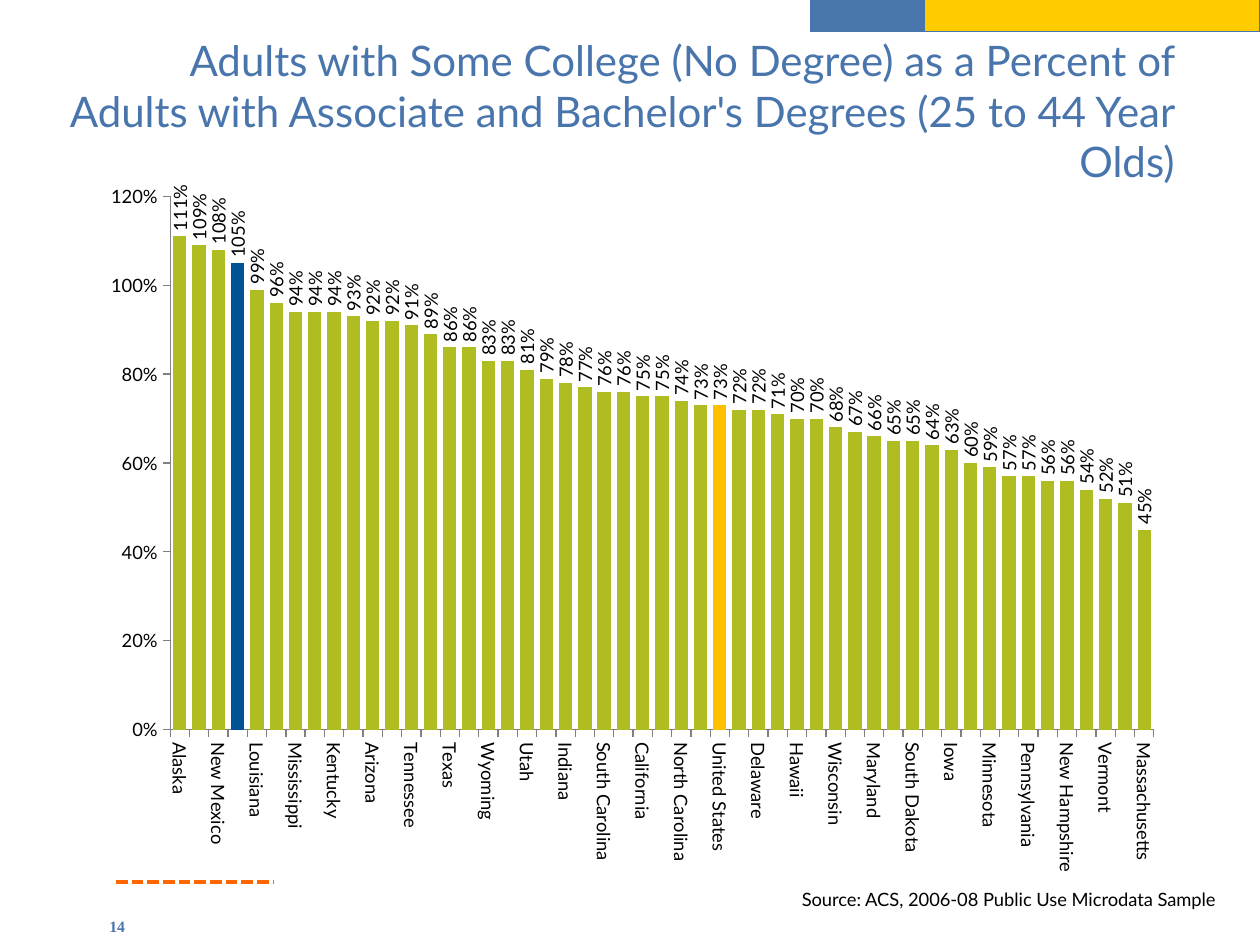
from lxml import etree
from pptx import Presentation
from pptx.chart.data import CategoryChartData
from pptx.dml.color import RGBColor
from pptx.enum.chart import XL_CHART_TYPE as ChartType, XL_LABEL_POSITION as LabelPosition, XL_TICK_MARK as TickMark
from pptx.enum.dml import MSO_LINE as LineStyle
from pptx.enum.shapes import MSO_CONNECTOR as Connector, MSO_SHAPE as Shape
from pptx.enum.text import MSO_ANCHOR as Anchor, PP_ALIGN as Align
from pptx.oxml.ns import qn
from pptx.util import Inches, Pt

BLUE = RGBColor(0x49, 0x75, 0xAD)
YELLOW = RGBColor(0xFF, 0xCC, 0x00)
ORANGE = RGBColor(0xFF, 0x66, 0x00)
GREEN = RGBColor(0xAF, 0xBD, 0x22)
NAVY = RGBColor(0x00, 0x52, 0x95)
GOLD = RGBColor(0xFF, 0xC0, 0x00)
GRAY = RGBColor(0x80, 0x80, 0x80)
BLACK = RGBColor(0, 0, 0)

HIGHLIGHTS = {"Arkansas": NAVY, "United States": GOLD}
STATE_PERCENTS = [
    ("Alaska", 111), ("Nevada", 109), ("New Mexico", 108), ("Arkansas", 105),
    ("Louisiana", 99), ("Oklahoma", 96), ("Mississippi", 94), ("West Virginia", 94),
    ("Kentucky", 94), ("Alabama", 93), ("Arizona", 92), ("Idaho", 92),
    ("Tennessee", 91), ("Michigan", 89), ("Texas", 86), ("Oregon", 86),
    ("Wyoming", 83), ("Missouri", 83), ("Utah", 81), ("Montana", 79),
    ("Indiana", 78), ("Ohio", 77), ("South Carolina", 76), ("Georgia", 76),
    ("California", 75), ("Maine", 75), ("North Carolina", 74), ("Kansas", 73),
    ("United States", 73), ("Washington", 72), ("Delaware", 72), ("Nebraska", 71),
    ("Hawaii", 70), ("Florida", 70), ("Wisconsin", 68), ("Virginia", 67),
    ("Maryland", 66), ("Illinois", 65), ("South Dakota", 65), ("Colorado", 64),
    ("Iowa", 63), ("Rhode Island", 60), ("Minnesota", 59), ("Connecticut", 57),
    ("Pennsylvania", 57), ("North Dakota", 56), ("New Hampshire", 56),
    ("New Jersey", 54), ("Vermont", 52), ("New York", 51), ("Massachusetts", 45),
]


def add_text(slide, box, text, size=10.5, font="Lato", color=BLACK, bold=False,
             align=Align.LEFT, anchor=Anchor.TOP):
    frame = slide.shapes.add_textbox(*map(Inches, box)).text_frame
    frame.word_wrap = True
    frame.vertical_anchor = anchor
    paragraph = frame.paragraphs[0]
    paragraph.alignment = align
    run = paragraph.add_run()
    run.text = text
    run.font.size = Pt(size)
    run.font.name = font
    run.font.bold = bold
    run.font.color.rgb = color


def add_top_band(slide, box):
    left, top, width, height = box
    blue_width = 0.91
    parts = [(left, blue_width, BLUE), (left + blue_width, width - blue_width, YELLOW)]
    for part_left, part_width, color in parts:
        shape = slide.shapes.add_shape(
            Shape.RECTANGLE, *map(Inches, (part_left, top, part_width, height)))
        shape.shadow.inherit = False
        shape.fill.solid()
        shape.fill.fore_color.rgb = color
        shape.line.color.rgb = BLUE
        shape.line.width = Pt(0.75)


def add_dotted_rule(slide, left, top, width):
    rule = slide.shapes.add_connector(
        Connector.STRAIGHT, *map(Inches, (left, top, left + width, top)))
    rule.line.color.rgb = ORANGE
    rule.line.width = Pt(2.25)
    rule.line.dash_style = LineStyle.SQUARE_DOT
    etree.SubElement(rule.element.spPr, qn("a:effectLst"))


def rotate_text(chart, parent, degrees):
    body = chart.element.xpath(f".//{parent}/c:txPr/a:bodyPr")[0]
    body.set("rot", str(degrees * 60000))
    body.set("vert", "horz")


def set_plot_layout(chart, x, y, w, h):
    plot_area = chart.element.xpath(".//c:plotArea")[0]
    for old_layout in plot_area.findall(qn("c:layout")):
        plot_area.remove(old_layout)
    layout = etree.Element(qn("c:layout"))
    manual = etree.SubElement(layout, qn("c:manualLayout"))
    settings = {"layoutTarget": "inner", "xMode": "edge", "yMode": "edge",
                "x": x, "y": y, "w": w, "h": h}
    for name, value in settings.items():
        etree.SubElement(manual, qn(f"c:{name}")).set("val", str(value))
    plot_area.insert(0, layout)


def style_axes(chart):
    for axis in (chart.category_axis, chart.value_axis):
        axis.has_major_gridlines = False
        axis.major_tick_mark = TickMark.OUTSIDE
        axis.minor_tick_mark = TickMark.NONE
        axis.format.line.color.rgb = GRAY
        axis.format.line.width = Pt(0.75)
        axis.tick_labels.font.size = Pt(10.5)
    value_axis = chart.value_axis
    value_axis.minimum_scale, value_axis.maximum_scale = 0, 1.2
    value_axis.major_unit = 0.2
    value_axis.tick_labels.number_format = "0%"
    value_axis.tick_labels.number_format_is_linked = False
    rotate_text(chart, "c:catAx", 90)
    skip = etree.Element(qn("c:tickLblSkip"))
    skip.set("val", "2")
    chart.element.xpath(".//c:catAx/c:noMultiLvlLbl")[0].addprevious(skip)


def add_state_chart(slide, box):
    data = CategoryChartData(number_format="0%")
    data.categories = [state for state, _ in STATE_PERCENTS]
    data.add_series("Series 1", [percent / 100 for _, percent in STATE_PERCENTS])
    chart = slide.shapes.add_chart(
        ChartType.COLUMN_CLUSTERED, *map(Inches, box), data).chart
    chart.has_legend = False
    chart.has_title = False
    chart.font.name = "Lato"
    chart.font.size = Pt(10.5)
    chart.font.color.rgb = BLACK
    plot = chart.plots[0]
    plot.vary_by_categories = False
    plot.gap_width = 45
    series = plot.series[0]
    series.format.fill.solid()
    series.format.fill.fore_color.rgb = GREEN
    for index, (state, _) in enumerate(STATE_PERCENTS):
        if state in HIGHLIGHTS:
            fill = series.points[index].format.fill
            fill.solid()
            fill.fore_color.rgb = HIGHLIGHTS[state]
    labels = series.data_labels
    labels.show_value = True
    labels.number_format = "0%"
    labels.number_format_is_linked = False
    labels.position = LabelPosition.OUTSIDE_END
    labels.font.size = Pt(10.5)
    rotate_text(chart, "c:dLbls", -90)
    style_axes(chart)
    set_plot_layout(chart, 0.07, 0.04, 0.91, 0.74)


def main():
    presentation = Presentation()
    presentation.slide_width = Inches(10)
    presentation.slide_height = Inches(7.5)
    slide = presentation.slides.add_slide(presentation.slide_layouts[6])
    add_dotted_rule(slide, 0.92, 7, 1.25)
    add_top_band(slide, (6.43, -0.01, 3.57, 0.26))
    add_text(slide, (0.42, 0.25, 9, 1.25),
             "Adults with Some College (No Degree) as a Percent of Adults with "
             "Associate and Bachelor's Degrees (25 to 44 Year Olds)",
             size=24, color=BLUE, align=Align.RIGHT, anchor=Anchor.MIDDLE)
    add_state_chart(slide, (0.75, 1.33, 8.58, 5.72))
    add_text(slide, (4.75, 7, 5, 0.29),
             "Source: ACS, 2006-08 Public Use Microdata Sample", align=Align.RIGHT)
    add_text(slide, (0.77, 7.23, 1, 0.27), "14", size=9, font="Times New Roman",
             color=BLUE, bold=True)
    presentation.save("out.pptx")


if __name__ == "__main__":
    main()
